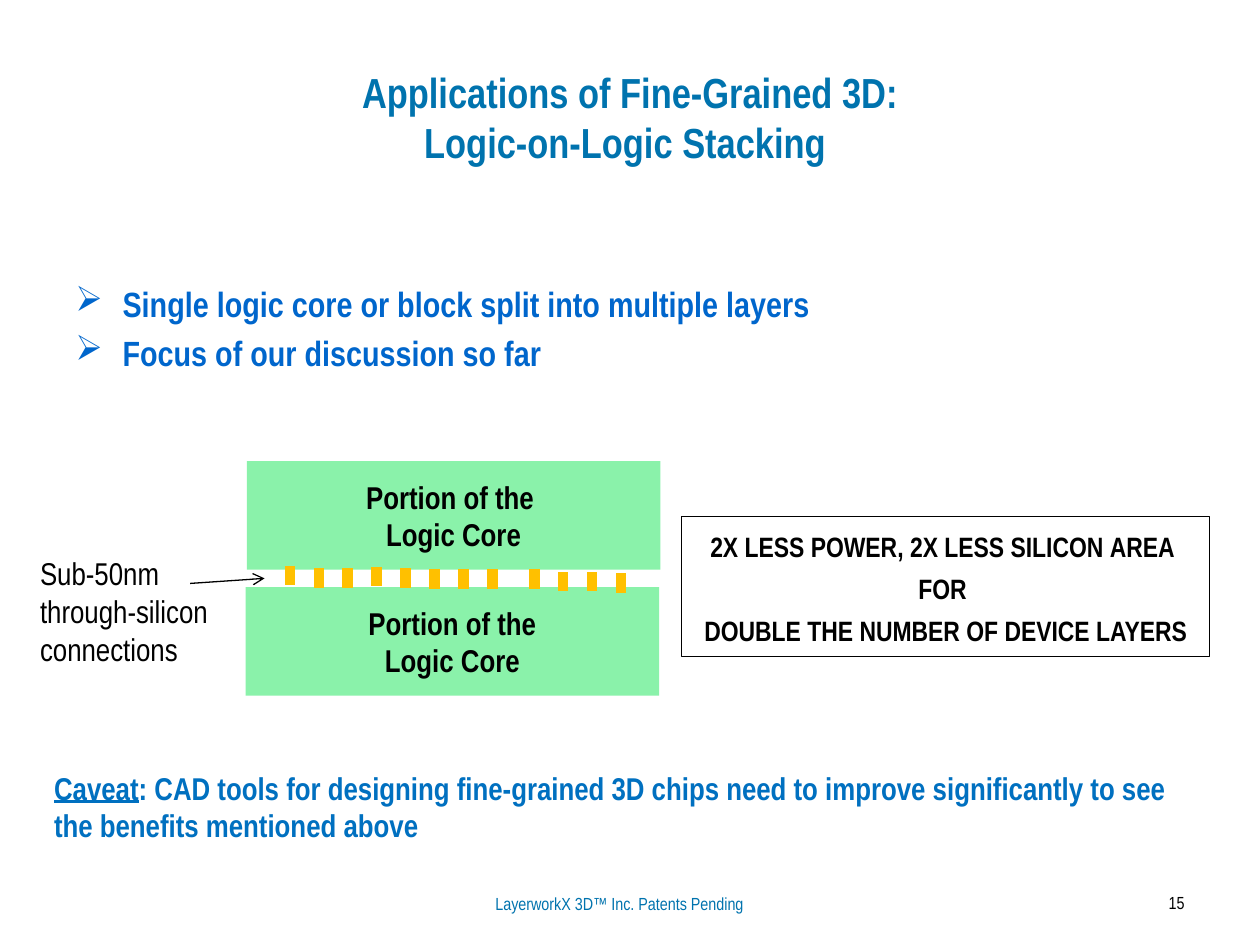
"""Build the slide on logic-on-logic stacking."""
from lxml import etree
from pptx import Presentation
from pptx.dml.color import RGBColor
from pptx.enum import shapes, text
from pptx.oxml.ns import qn
from pptx.util import Pt

THEME = {
    "font": "Arial Narrow",
    "title": "0073AE", "point": "0066CC", "note": "0070C0",
    "ink": "000000", "core": "8AF2AA", "pin": "FFC000",
    "head": 24, "body": 20, "label": 18, "foot": 10,
}
LEFT, MID, RIGHT = text.PP_ALIGN.LEFT, text.PP_ALIGN.CENTER, text.PP_ALIGN.RIGHT

# place, paragraphs, colour, size, bold, alignment
TEXTS = [
    ((36, 21.6, 648, 90),
     ["Applications of Fine-Grained 3D:\vLogic-on-Logic Stacking "],
     "title", "head", True, MID),
    ((36, 157.7, 648, 103),
     ["Single logic core or block split into multiple layers",
      "Focus of our discussion so far"], "point", "body", True, LEFT),
    ((239.8, 506.9, 228.2, 18.7), ["LayerworkX 3D™ Inc. Patents Pending"],
     "title", "foot", False, MID),
    ((604, 506.2, 80, 23.8), ["15"], "ink", "foot", False, RIGHT),
    ((15.8, 313.2, 121, 72.7), ["Sub-50nm through-silicon connections"],
     "ink", "label", False, LEFT),
    ((23.8, 435.6, 667.4, 51.1),
     ["Caveat", ": CAD tools for designing fine-grained 3D chips need to "
      "improve significantly to see the benefits mentioned above"],
     "note", "label", True, LEFT),
]
CORES = [
    ((140.4, 335.5, 236.2, 62), ["Portion of the", "Logic Core"]),
    ((141.1, 263.5, 236.2, 62), ["Portion of the ", "Logic Core"]),
]
GAIN = ((389.5, 295.2, 301.7, 79.9),
        ["2x less power, 2x less silicon area ", "for ",
         "double the number of device layers"])
# first x and the top of each pin in the group
PINS = [
    (165.6, [323.3, 324.7, 324.7, 324, 324.7, 325.4, 325.4, 325.4]),
    (305.3, [325.4, 326.9, 326.9, 327.6]),
]
STEP, DEPTH = 16.56, 11.1
ARROW = (108.7, 333.4, 151.2, 330.5)


def tint(name):
    return RGBColor.from_string(THEME[name])


def write(frame, lines, hue, size, bold, align):
    frame.word_wrap = True
    frame.text = "\n".join(lines)
    for para in frame.paragraphs:
        para.alignment = align
        for run in para.runs:
            style(run, hue, size, bold)


def style(run, hue, size, bold):
    font = run.font
    font.name, font.size, font.bold = THEME["font"], Pt(THEME[size]), bold
    font.color.rgb = tint(hue)


def label(slide, place, lines, *look):
    box = slide.shapes.add_textbox(*map(Pt, place))
    write(box.text_frame, lines, *look)
    return box.text_frame


def block(slide, place, lines, size):
    box = slide.shapes.add_shape(shapes.MSO_SHAPE.RECTANGLE, *map(Pt, place))
    box.shadow.inherit = False
    write(box.text_frame, lines, "ink", size, True, MID)
    return box


def wire(slide, ends, hue, width):
    line = slide.shapes.add_connector(
        shapes.MSO_CONNECTOR.STRAIGHT, *map(Pt, ends))
    line.line.color.rgb = tint(hue)
    line.line.width = Pt(width)
    etree.SubElement(line._element.spPr, qn("a:effectLst"))
    return line


def bullet(para):
    props = para._p.get_or_add_pPr()
    props.set("marL", str(Pt(27)))
    props.set("indent", str(Pt(-27)))
    etree.SubElement(props, qn("a:buChar")).set("char", "➢")


def main():
    deck = Presentation()
    deck.slide_width, deck.slide_height = Pt(720), Pt(540)
    slide = deck.slides.add_slide(deck.slide_layouts[6])

    title, points, *rest = TEXTS
    *rest, caveat = rest
    label(slide, *title).vertical_anchor = text.MSO_ANCHOR.MIDDLE
    items = label(slide, *points).paragraphs
    for item in items:
        bullet(item)
    for item in items[1:]:
        item.space_before = Pt(4)
    for entry in rest:
        label(slide, *entry)

    place, (word, tail), *look = caveat
    para = label(slide, place, [word], *look).paragraphs[0]
    para.runs[0].font.underline = True
    run = para.add_run()
    run.text = tail
    style(run, *look[:3])

    for place, lines in CORES:
        core = block(slide, place, lines, "label")
        core.fill.solid()
        core.fill.fore_color.rgb = tint("core")
        core.line.fill.background()
        core.text_frame.vertical_anchor = text.MSO_ANCHOR.MIDDLE

    for start, tops in PINS:
        for i, top in enumerate(tops):
            x = start + i * STEP
            wire(slide, (x, top, x, top + DEPTH), "pin", 6)
    arrow = wire(slide, ARROW, "ink", 0.75)
    etree.SubElement(arrow.line._get_or_add_ln(), qn("a:tailEnd")).set("type", "arrow")

    gain = block(slide, *GAIN, "body")
    gain.fill.background()
    gain.line.color.rgb = tint("ink")
    gain.line.width = Pt(0.75)
    gain.text_frame.vertical_anchor = text.MSO_ANCHOR.TOP
    for para in gain.text_frame.paragraphs:
        para.runs[0].font._element.set("cap", "small")

    deck.save("out.pptx")


if __name__ == "__main__":
    main()
